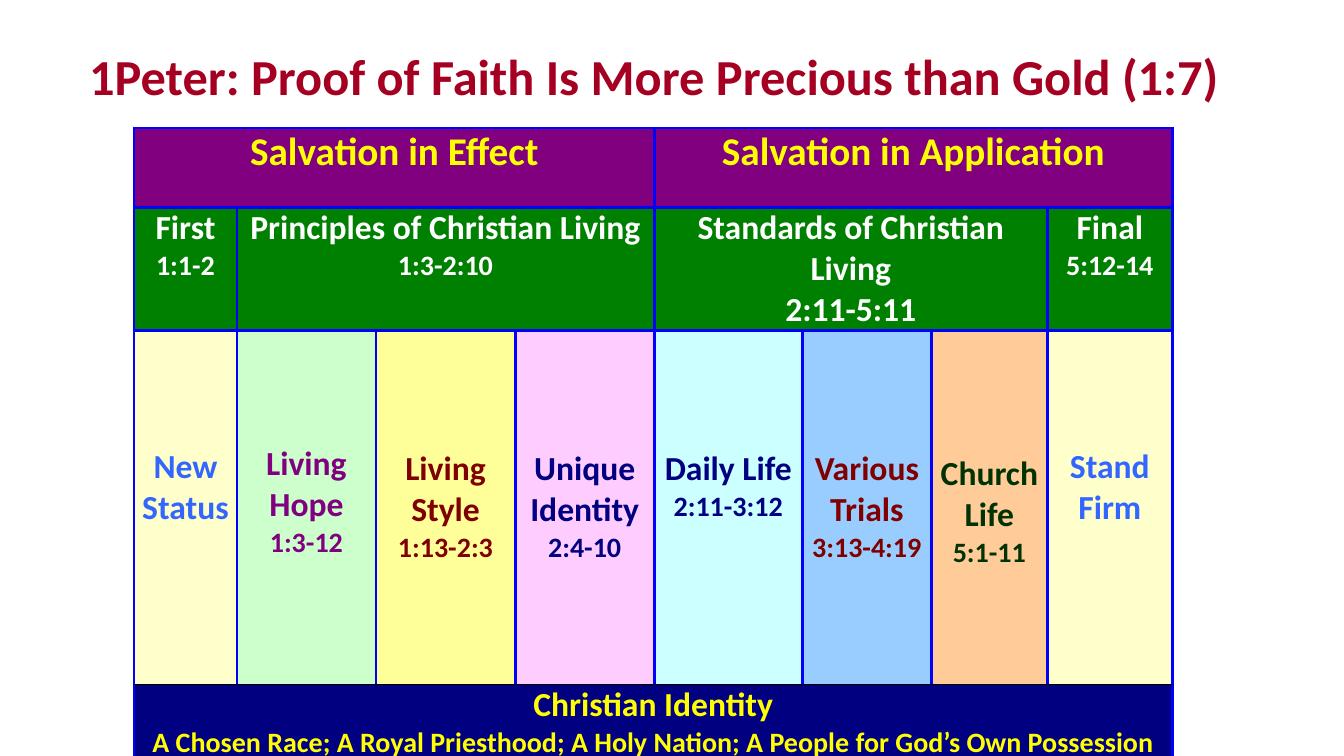
from lxml.etree import SubElement as Sub
from pptx import Presentation
from pptx.dml.color import RGBColor as RGB
from pptx.enum.text import MSO_AUTO_SIZE as Fit, PP_ALIGN as Align
from pptx.oxml.ns import qn
from pptx.util import Pt

HEX = {
    "red": "A50021", "purple": "800080", "green": "008000", "navy": "000080",
    "yellow": "FFFF00", "white": "FFFFFF", "sky": "3366FF", "maroon": "800000",
    "forest": "003300", "cream": "FFFFCC", "mint": "CCFFCC", "lemon": "FFFF99",
    "pink": "FFCCFF", "aqua": "CCFFFF", "blue": "99CCFF", "peach": "FFCC99",
    "edge": "0000FF", "black": "000000",
}
FONT = "Calibri"
TITLE = "1Peter: Proof of Faith Is More Precious than Gold (1:7)"
COLS = [73.4, 99.4, 99.4, 99.4, 105.8, 92.2, 82.8, 89.3]
ROWS = [56.9, 87.8, 252.7, 55.4]
LEFT, TOP = 95.8, 91.4

# span, fill, ink, top inset, paragraphs of (text, size) runs
GRID = [
    [
        (4, "purple", "yellow", 0, [[("Salvation in Effect", 28)]]),
        (4, "purple", "yellow", 0, [[("Salvation in Application", 28)]]),
    ],
    [
        (1, "green", "white", 0, [[("First", 24)], [("1:1-2", 20)]]),
        (3, "green", "white", 0,
         [[("Principles of Christian Living", 24)], [("1:3-2:10", 20)]]),
        (3, "green", "white", 0,
         [[("Standards of Christian Living", 24)], [("2:11-5:11", 24)]]),
        (1, "green", "white", 0, [[("Final ", 24), ("5:12-14", 20)]]),
    ],
    [
        (1, "cream", "sky", 83, [[("New Status", 24)]]),
        (1, "mint", "purple", 81, [[("Living Hope", 24)], [("1:3-12", 20)]]),
        (1, "lemon", "maroon", 84.3, [[("Living Style", 24)], [("1:13-2:3", 20)]]),
        (1, "pink", "navy", 84.3, [[("Unique Identity", 24)], [("2:4-10", 20)]]),
        (1, "aqua", "navy", 84.3, [[("Daily Life", 24)], [("2:11-3:12", 20)]]),
        (1, "blue", "maroon", 84.3, [[("Various Trials", 24)], [("3:13-4:19", 20)]]),
        (1, "peach", "forest", 88, [[("Church Life", 24)], [("5:1-11", 20)]]),
        (1, "cream", "sky", 83, [[("Stand Firm", 24)]]),
    ],
    [
        (8, "navy", "yellow", 0, [
            [("Christian Identity", 24)],
            [("A Chosen Race; A Royal Priesthood; A Holy Nation; "
              "A People for God’s Own Possession", 20)],
        ]),
    ],
]


def write(frame, paras, ink):
    """Fill a text frame with centred bold paragraphs."""
    frame.word_wrap = True
    for i, runs in enumerate(paras):
        para = frame.paragraphs[0] if i == 0 else frame.add_paragraph()
        para.alignment = Align.CENTER
        for text, size in runs:
            run = para.add_run()
            run.text = text
            font = run.font
            font.name, font.size, font.bold = FONT, Pt(size), True
            font.color.rgb = RGB.from_string(HEX[ink])


def border(cell, row):
    """Draw the four borders of a cell, with a thin black rule above the last row."""
    props = cell._tc.get_or_add_tcPr()
    last = len(ROWS) - 1
    for side in "LRTB":
        thin = (row, side) in ((last - 1, "B"), (last, "T"))
        width, tone = (1, "black") if thin else (2.25, "edge")
        line = Sub(props, qn("a:ln" + side), w=str(int(Pt(width))))
        Sub(Sub(line, qn("a:solidFill")), qn("a:srgbClr"), val=HEX[tone])


def chart(slide):
    """Build the outline table."""
    table = slide.shapes.add_table(
        len(ROWS), len(COLS), Pt(LEFT), Pt(TOP), Pt(sum(COLS)), Pt(sum(ROWS))
    ).table
    table.first_row = table.horz_banding = False
    for col, width in zip(table.columns, COLS):
        col.width = Pt(width)
    for r, cells in enumerate(GRID):
        table.rows[r].height = Pt(ROWS[r])
        c = 0
        for span, fill, ink, inset, paras in cells:
            for k in range(c, c + span):
                cell = table.cell(r, k)
                border(cell, r)
                cell.fill.solid()
                cell.fill.fore_color.rgb = RGB.from_string(HEX[fill])
            cell = table.cell(r, c)
            if span > 1:
                cell.merge(table.cell(r, c + span - 1))
            cell.margin_left = cell.margin_right = Pt(4.3)
            cell.margin_top, cell.margin_bottom = Pt(inset), Pt(0)
            write(cell.text_frame, paras, ink)
            c += span


def main():
    """Build the slide and save it."""
    deck = Presentation()
    deck.slide_width, deck.slide_height = Pt(960), Pt(540)
    slide = deck.slides.add_slide(deck.slide_layouts[6])
    chart(slide)
    box = slide.shapes.add_textbox(Pt(23.8), Pt(28.8), Pt(887), Pt(51.1))
    write(box.text_frame, [[(TITLE, 36)]], "red")
    box.text_frame.auto_size = Fit.SHAPE_TO_FIT_TEXT
    deck.save("out.pptx")


if __name__ == "__main__":
    main()
